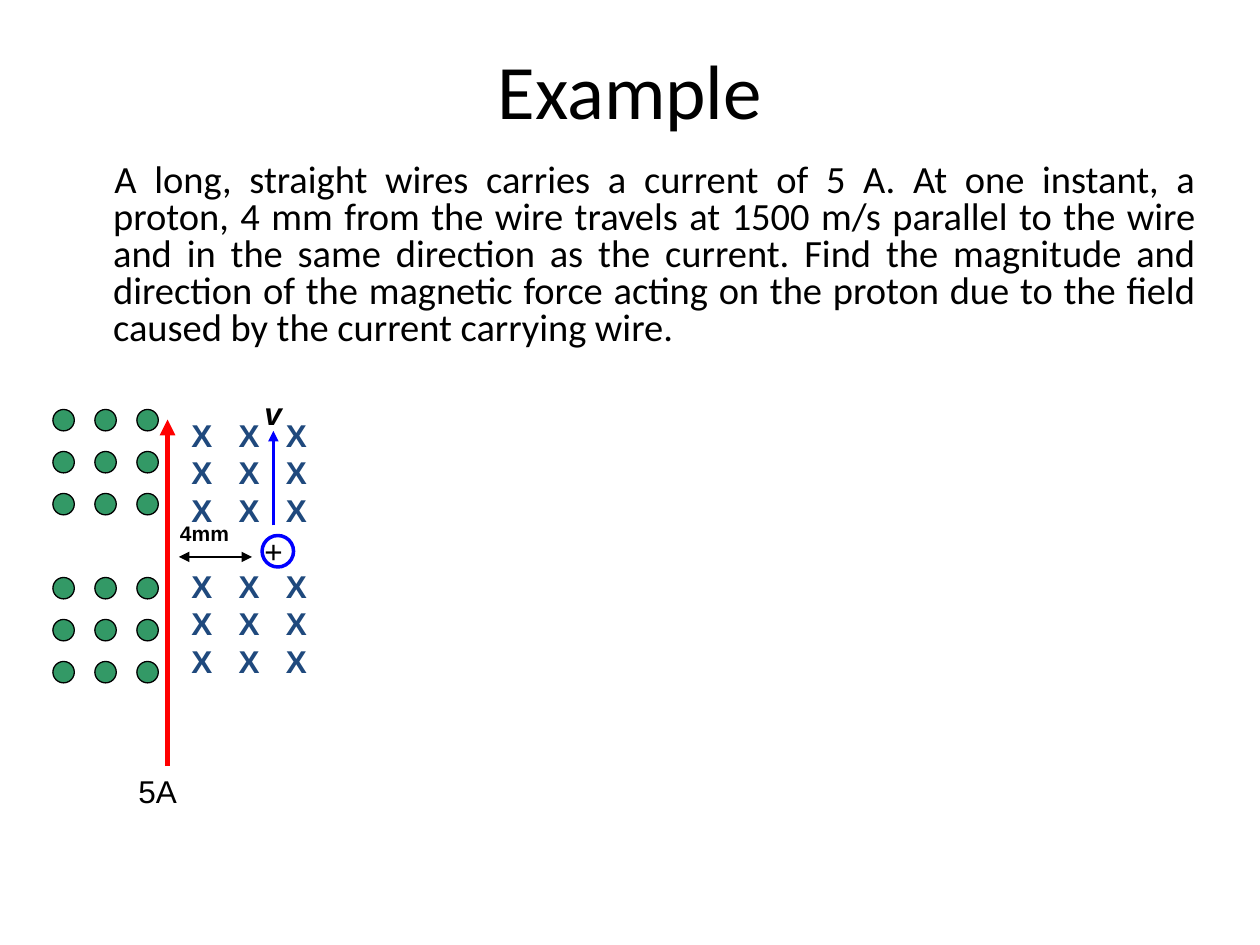
import dataclasses
import itertools

import lxml.etree
import pptx
import pptx.dml.color
import pptx.enum.shapes
import pptx.enum.text
import pptx.oxml
import pptx.oxml.ns
import pptx.util

Inches = pptx.util.Inches
Pt = pptx.util.Pt
Align = pptx.enum.text.PP_ALIGN
qn = pptx.oxml.ns.qn


@dataclasses.dataclass(frozen=True)
class Theme:
    text_font: str = "Calibri"
    label_font: str = "Arial"
    black: str = "000000"
    current: str = "FF0000"
    proton: str = "0000FF"
    field_out: str = "339966"
    field_in: str = "1F497D"
    title_size: int = 44
    body_size: int = 22
    label_size: int = 18
    small_size: int = 12
    thin: float = 0.75
    medium: float = 2
    thick: float = 3


def rgb(color):
    return pptx.dml.color.RGBColor.from_string(color)


class SlideBuilder:
    def __init__(self, presentation, theme):
        self.theme = theme
        self.slide = presentation.slides.add_slide(presentation.slide_layouts[5])

    def format_text(self, text_frame, size, font, color, bold=False, italic=False):
        for paragraph in text_frame.paragraphs:
            for run in paragraph.runs:
                run.font.size = Pt(size)
                run.font.name = font
                run.font.bold = bold
                run.font.italic = italic
                run.font.color.rgb = rgb(color)

    def title(self, text, left, top, width, height):
        shape = self.slide.shapes.title
        shape.left, shape.top = Inches(left), Inches(top)
        shape.width, shape.height = Inches(width), Inches(height)
        text_frame = shape.text_frame
        text_frame.text = text
        text_frame.vertical_anchor = pptx.enum.text.MSO_ANCHOR.MIDDLE
        text_frame.paragraphs[0].alignment = Align.CENTER
        self.format_text(text_frame, self.theme.title_size, self.theme.text_font, self.theme.black)

    def text_box(self, text, left, top, width, height, wrap=True):
        shape = self.slide.shapes.add_textbox(
            Inches(left), Inches(top), Inches(width), Inches(height)
        )
        text_frame = shape.text_frame
        text_frame.word_wrap = wrap
        text_frame.text = text
        return text_frame

    def body(self, text, left, top, width, height):
        text_frame = self.text_box(text, left, top, width, height)
        paragraph = text_frame.paragraphs[0]
        paragraph.alignment = Align.JUSTIFY
        paragraph.line_spacing = 0.8
        paragraph.space_before = Pt(0.2 * self.theme.body_size)
        properties = paragraph._p.get_or_add_pPr()
        properties.set("marL", str(Inches(0.38)))
        properties.set("indent", str(Inches(0.01)))
        self.format_text(text_frame, self.theme.body_size, self.theme.text_font, self.theme.black)

    def label(self, text, left, top, width, height, size=None, bold=False, italic=False):
        text_frame = self.text_box(text, left, top, width, height, wrap=False)
        text_frame.auto_size = pptx.enum.text.MSO_AUTO_SIZE.SHAPE_TO_FIT_TEXT
        self.format_text(
            text_frame, size or self.theme.label_size, self.theme.label_font,
            self.theme.black, bold, italic,
        )

    def cross_grid(self, left, top, width, height, rows, columns, pitch, gap_row):
        line = "\t".join("X" * columns)
        text_frame = self.text_box("\n".join([line] * rows), left, top, width, height)
        for paragraph in text_frame.paragraphs:
            properties = paragraph._p.get_or_add_pPr()
            tab_list = lxml.etree.SubElement(properties, qn("a:tabLst"))
            for column in range(1, columns):
                tab = lxml.etree.SubElement(tab_list, qn("a:tab"))
                tab.set("pos", str(Inches(column * pitch)))
                tab.set("algn", "l")
        text_frame.paragraphs[gap_row].space_before = Pt(21.5)
        self.format_text(
            text_frame, self.theme.label_size, self.theme.label_font,
            self.theme.field_in, bold=True,
        )

    def circle(self, left, top, diameter, line, width, fill=None):
        shape = self.slide.shapes.add_shape(
            pptx.enum.shapes.MSO_SHAPE.FLOWCHART_CONNECTOR,
            Inches(left), Inches(top), Inches(diameter), Inches(diameter),
        )
        shape.shadow.inherit = False
        if fill:
            shape.fill.solid()
            shape.fill.fore_color.rgb = rgb(fill)
        else:
            shape.fill.background()
        shape.line.color.rgb = rgb(line)
        shape.line.width = Pt(width)

    def arrow(self, start, end, color, width, both_ends=False):
        connector = self.slide.shapes.add_connector(
            pptx.enum.shapes.MSO_CONNECTOR.STRAIGHT, *map(Inches, start + end)
        )
        connector.line.color.rgb = rgb(color)
        connector.line.width = Pt(width)
        line = connector.line._get_or_add_ln()
        for name in ("headEnd", "tailEnd") if both_ends else ("tailEnd",):
            lxml.etree.SubElement(line, qn(f"a:{name}")).set("type", "triangle")
        lxml.etree.SubElement(connector._element.spPr, qn("a:effectLst"))


def main():
    presentation = pptx.Presentation()
    presentation.slide_width = Inches(10)
    presentation.slide_height = Inches(7.5)
    theme = Theme()
    builder = SlideBuilder(presentation, theme)

    builder.title("Example", 0.5, 0.08, 9, 1.25)
    builder.body(
        "A long, straight wires carries a current of 5 A. At one instant, a proton, "
        "4 mm from the wire travels at 1500 m/s parallel to the wire and in the same "
        "direction as the current. Find the magnitude and direction of the magnetic "
        "force acting on the proton due to the field caused by the current carrying wire.",
        0.42, 1.25, 9.17, 1.67,
    )

    builder.arrow((1.33, 6.08), (1.33, 3.33), theme.current, theme.thick)
    builder.label("5A", 1, 6.08, 0.51, 0.4)
    builder.arrow((1.42, 4.42), (2, 4.42), theme.black, theme.thin, both_ends=True)
    builder.label("4mm", 1.33, 4.08, 0.59, 0.3, size=theme.small_size, bold=True)

    builder.circle(2.08, 4.25, 0.25, theme.proton, theme.medium)
    builder.label("+", 2, 4.17, 0.35, 0.4)
    builder.arrow((2.17, 4.17), (2.17, 3.42), theme.proton, theme.medium)
    builder.label("v", 2, 3.08, 0.34, 0.4, bold=True, italic=True)

    dot_pitch = 1 / 3
    for row, column in itertools.product((0, 1, 2, 4, 5, 6), range(3)):
        builder.circle(
            0.42 + column * dot_pitch, 3.25 + row * dot_pitch, 0.17,
            theme.black, theme.thin, theme.field_out,
        )
    builder.cross_grid(1.42, 3.25, 1.2, 2.2, rows=6, columns=3, pitch=0.375, gap_row=3)

    presentation.save("out.pptx")


if __name__ == "__main__":
    main()
